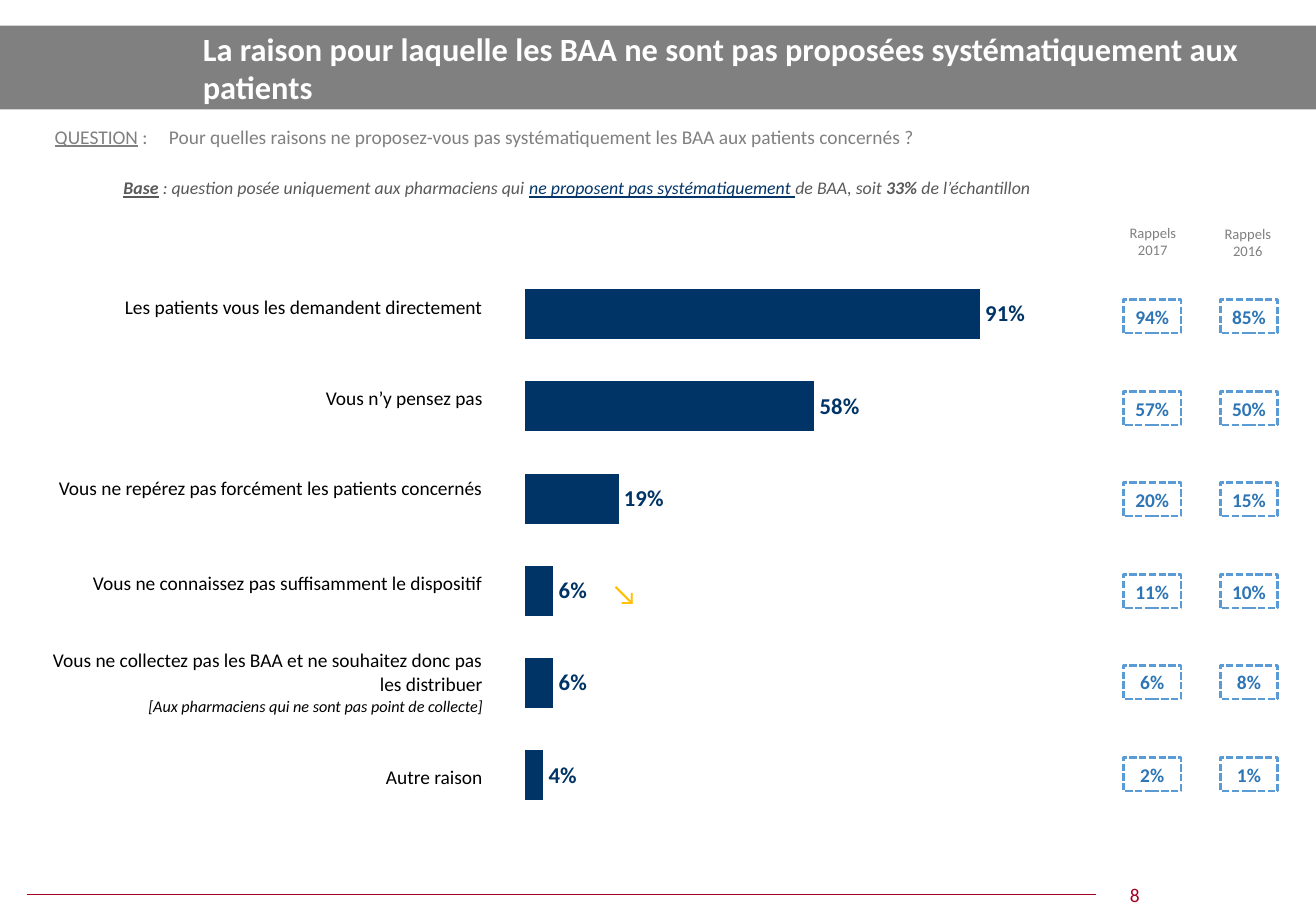
from lxml.etree import SubElement
from pptx import Presentation
from pptx.chart.data import CategoryChartData
from pptx.dml.color import RGBColor
from pptx.enum.chart import XL_CHART_TYPE, XL_LABEL_POSITION
from pptx.enum.dml import MSO_LINE
from pptx.enum.shapes import MSO_CONNECTOR, MSO_SHAPE
from pptx.enum.text import MSO_ANCHOR, MSO_AUTO_SIZE, PP_ALIGN
from pptx.oxml import parse_xml
from pptx.oxml.ns import nsdecls, qn
from pptx.util import Pt

PX = 9144
rgb = RGBColor.from_string


def write(p, runs, size, color, align=PP_ALIGN.LEFT):
    p.alignment = align
    for text, fmt in runs:
        r = p.add_run()
        r.text = text
        values = {"name": "Calibri", "size": Pt(size), **fmt}
        r.font.color.rgb = rgb(values.pop("color", color))
        for key, value in values.items():
            setattr(r.font, key, value)


def add_text(at, runs, size, color, align=PP_ALIGN.LEFT, margins=(10, 5, 10, 5)):
    sp = s.shapes.add_textbox(*[v * PX for v in at])
    tf = sp.text_frame
    tf.word_wrap = True
    tf.auto_size = MSO_AUTO_SIZE.SHAPE_TO_FIT_TEXT
    for side, v in zip(("left", "top", "right", "bottom"), margins):
        setattr(tf, f"margin_{side}", v * PX)
    write(tf.paragraphs[0], runs, size, color, align)
    return tf.paragraphs[0]


prs = Presentation()
prs.slide_width, prs.slide_height = 1129 * PX, 787 * PX
s = prs.slides.add_slide(prs.slide_layouts[5])

title = s.shapes.title
for key, v in {"left": 164, "top": 22, "width": 948, "height": 72}.items():
    setattr(title, key, v * PX)
tf = title.text_frame
tf.auto_size = MSO_AUTO_SIZE.NONE
tf.vertical_anchor = MSO_ANCHOR.MIDDLE
write(tf.paragraphs[0], [("La raison pour laquelle les BAA ne sont pas proposées systématiquement aux patients",
                          {"bold": True})], 20, "FFFFFF")

band = s.shapes.add_shape(MSO_SHAPE.RECTANGLE, 0, 22 * PX, 1129 * PX, 72 * PX)
band.shadow.inherit = False
band.fill.solid()
band.fill.fore_color.rgb = rgb("808080")
band.line.fill.background()
title._element.addprevious(band._element)

rule = s.shapes.add_connector(MSO_CONNECTOR.STRAIGHT, 23 * PX, 768 * PX, 940 * PX, 768 * PX)
rule.line.color.rgb = rgb("A50021")
rule.line.width = Pt(0.5)
SubElement(rule._element.spPr, qn("a:effectLst"))
add_text((940, 753, 67, 30), [("8", {})], 12, "A50021", PP_ALIGN.CENTER)

reasons = [
    ("Les patients vous les demandent directement", 78, 0.91, "94%", "85%"),
    ("Vous n’y pensez pas", 78, 0.58, "57%", "50%"),
    ("Vous ne repérez pas forcément les patients concernés", 78, 0.19, "20%", "15%"),
    ("Vous ne connaissez pas suffisamment le dispositif", 85, 0.06, "11%", "10%"),
    ("Vous ne collectez pas les BAA et ne souhaitez donc pas les distribuer", 85, 0.06, "6%", "8%"),
    ("Autre raison", 78, 0.04, "2%", "1%"),
]
notes = {4: "[Aux pharmaciens qui ne sont pas point de collecte]"}

table = s.shapes.add_table(len(reasons), 1, 7 * PX, 225 * PX, 411 * PX, 479 * PX).table
table.first_row = table.horz_banding = False
for i, (label, height, *_) in enumerate(reasons):
    table.rows[i].height = height * PX
    cell = table.cell(i, 0)
    cell.fill.background()
    cell.vertical_anchor = MSO_ANCHOR.MIDDLE
    cell.margin_left = cell.margin_right = 4 * PX
    cell.margin_top = cell.margin_bottom = 0
    p = cell.text_frame.paragraphs[0]
    p._p.get_or_add_pPr().set("marL", str(25 * PX))
    p.space_after = Pt(3)
    write(p, [(label, {})], 12, "000000", PP_ALIGN.RIGHT)
    if i in notes:
        p.add_line_break()
        write(p, [(" ", {"italic": True, "size": Pt(10.5)}), (notes[i], {"italic": True})],
              10, "000000", PP_ALIGN.RIGHT)

p = add_text((38, 97, 1067, 57), [
    ("QUESTION", {"underline": True}),
    (" :\tPour quelles raisons ne proposez-vous pas systématiquement les BAA aux patients concernés ? ", {}),
], 12, "808080", PP_ALIGN.JUSTIFY, (9, 18, 36, 18))
pPr = p._p.get_or_add_pPr()
pPr.set("marL", str(98 * PX))
pPr.set("indent", str(-98 * PX))

base = {"italic": True}
strong = {**base, "bold": True}
add_text((106, 152, 787, 19), [
    ("Base", {**strong, "underline": True}),
    (" : question posée uniquement aux pharmaciens qui ", base),
    ("ne proposent pas systématiquement ", {**base, "color": "033568", "underline": True}),
    ("de BAA, soit ", base),
    ("33% ", strong),
    ("de l’échantillon ", base),
], 11, "595959", PP_ALIGN.JUSTIFY, (0, 0, 0, 0))

recalls = [("Rappels 2016", 1035, 188, 71, 1047, 4), ("Rappels 2017", 954, 187, 70, 964, 3)]
for heading, head_x, head_y, head_w, x, column in recalls:
    add_text((head_x, head_y, head_w, 40), [(heading, {})], 9, "808080", PP_ALIGN.CENTER)
    for i, row in enumerate(reasons):
        y = 257 + round(i * 393 / 5)
        sp = s.shapes.add_shape(MSO_SHAPE.RECTANGLE, x * PX, y * PX, 49 * PX, 29 * PX)
        sp.shadow.inherit = False
        sp.fill.solid()
        sp.fill.fore_color.rgb = rgb("FFFFFF")
        sp.line.color.rgb = rgb("5B9BD5")
        sp.line.width = Pt(1.5)
        sp.line.dash_style = MSO_LINE.SQUARE_DOT
        tf = sp.text_frame
        tf.margin_left = tf.margin_right = 0
        tf.margin_top = tf.margin_bottom = 4 * PX
        tf.vertical_anchor = MSO_ANCHOR.MIDDLE
        write(tf.paragraphs[0], [(row[column], {"bold": True})], 12, "2E75B6", PP_ALIGN.CENTER)

data = CategoryChartData(number_format="0%")
data.categories = [str(i + 1) for i in range(len(reasons))]
data.add_series("Series 1", [row[2] for row in reasons])
chart = s.shapes.add_chart(XL_CHART_TYPE.BAR_CLUSTERED,
                           *[v * PX for v in (431, 230, 463, 475)], data).chart
chart.has_legend = chart.has_title = False
chart.font.name, chart.font.size = "Calibri", Pt(18)
chart.font.color.rgb = rgb("000000")
chart.category_axis.reverse_order = True
chart.value_axis.minimum_scale, chart.value_axis.maximum_scale = 0, 1
chart.value_axis.has_major_gridlines = False
chart.category_axis.visible = chart.value_axis.visible = False
plot = chart.plots[0]
plot.gap_width = 80
plot.vary_by_categories = False
bars = plot.series[0].format
bars.fill.solid()
bars.fill.fore_color.rgb = rgb("003366")
bars.line.color.rgb = rgb("FFFFFF")
bars.line.width = Pt(0.75)
labels = plot.series[0].data_labels
for key, value in {"show_value": True, "number_format": "0%", "number_format_is_linked": False,
                   "position": XL_LABEL_POSITION.OUTSIDE_END}.items():
    setattr(labels, key, value)
for key, value in {"name": "Calibri", "size": Pt(14), "bold": True}.items():
    setattr(labels.font, key, value)
labels.font.color.rgb = rgb("003366")
area = chart._chartSpace.chart.plotArea
for old in area.findall(qn("c:layout")):
    area.remove(old)
area.insert(0, parse_xml(
    f'<c:layout {nsdecls("c")}><c:manualLayout><c:layoutTarget val="inner"/>'
    '<c:xMode val="edge"/><c:yMode val="edge"/><c:x val="0.04"/><c:y val="0"/>'
    '<c:w val="0.93"/><c:h val="1"/></c:manualLayout></c:layout>'))

add_text((515, 489, 46, 40), [("↘", {})], 18, "FFC000")

prs.save("out.pptx")
